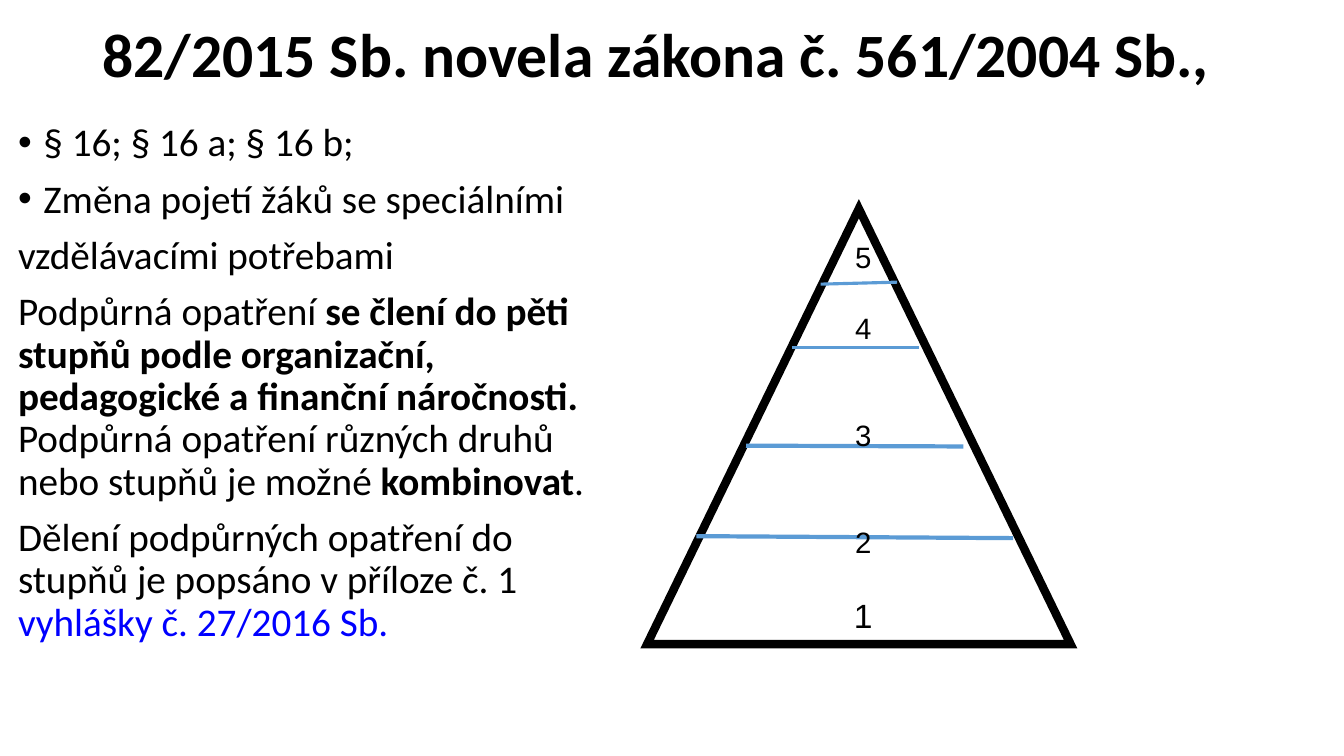
from lxml import etree
from pptx import Presentation
from pptx.dml.color import RGBColor
from pptx.enum.shapes import MSO_CONNECTOR, MSO_SHAPE
from pptx.enum.text import MSO_ANCHOR, MSO_AUTO_SIZE, PP_ALIGN
from pptx.oxml.ns import qn
from pptx.util import Cm, Pt

LEFT, CENTER = PP_ALIGN.LEFT, PP_ALIGN.CENTER
TOP, MIDDLE = MSO_ANCHOR.TOP, MSO_ANCHOR.MIDDLE
FIXED = MSO_AUTO_SIZE.NONE
STRAIGHT = MSO_CONNECTOR.STRAIGHT
TRIANGLE = MSO_SHAPE.ISOSCELES_TRIANGLE

COLORS = {"ink": "000000", "paper": "FFFFFF", "rung": "5B9BD5", "link": "0000FF"}

TITLE = "82/2015 Sb. novela zákona č. 561/2004 Sb.,"

# Each paragraph: bulleted or not, then its (text, style) runs.
BODY = [
    (True, [("§ 16; § 16 a; § 16 b;", "")]),
    (True, [("Změna pojetí žáků se speciálními", "")]),
    (False, [("vzdělávacími potřebami", "")]),
    (False, [
        ("Podpůrná opatření ", ""),
        ("se člení do pěti stupňů podle organizační, pedagogické "
         "a finanční náročnosti. ", "bold"),
        ("Podpůrná opatření různých druhů nebo stupňů je možné ", ""),
        ("kombinovat", "bold"),
        (".", ""),
    ]),
    (False, [
        ("Dělení podpůrných opatření do stupňů je popsáno v příloze č. 1 ", ""),
        ("vyhlášky č. 27/2016 Sb.", "link"),
    ]),
]

# Level, text size and space above, in points
LEVELS = [("5", 21, 0), ("4", 21, 26), ("3", 21, 51), ("2", 21, 51), ("1", 24, 26)]

# Start x, y, end x, y in cm, then width in points
RUNGS = [
    (17.55, 13.51, 25.53, 13.56, 3),
    (18.8, 11.23, 24.28, 11.25, 3),
    (19.96, 8.76, 23.16, 8.76, 2.25),
    (20.68, 7.16, 22.61, 7.11, 2.25),
]


def paint(name):
    return RGBColor.from_string(COLORS[name])


def write(para, text, size, font="Calibri", bold=False, color="ink"):
    run = para.add_run()
    run.text = text
    run.font.size = Pt(size)
    run.font.name = font
    run.font.bold = bold
    run.font.color.rgb = paint(color)


def place(shape, left, top, width, height, anchor=TOP):
    """Set a shape's box and return its text frame, ready for text."""
    shape.left, shape.top = Cm(left), Cm(top)
    shape.width, shape.height = Cm(width), Cm(height)
    frame = shape.text_frame
    frame.word_wrap = True
    frame.auto_size = FIXED
    frame.vertical_anchor = anchor
    return frame


def lines(frame, items):
    """Yield a paragraph with each item, using the first one already there."""
    for num, item in enumerate(items):
        yield (frame.add_paragraph() if num else frame.paragraphs[0]), item


def mark(para, on):
    """Turn the bullet and its hanging indent on or off."""
    props = para._p.get_or_add_pPr()
    hang = Cm(0.64) if on else 0
    props.set("marL", str(hang))
    props.set("indent", str(-hang))
    if on:
        etree.SubElement(props, qn("a:buFont")).set("typeface", "Arial")
        etree.SubElement(props, qn("a:buChar")).set("char", "•")
    else:
        etree.SubElement(props, qn("a:buNone"))


def add_text(slide):
    frame = place(slide.shapes.title, 2.33, 0.15, 29.21, 2.62, MIDDLE)
    para = frame.paragraphs[0]
    para.alignment = LEFT
    para.line_spacing = 0.9
    write(para, TITLE, 44, bold=True)

    frame = place(slide.placeholders[1], 0.2, 2.97, 15.21, 16.08)
    for para, (dot, runs) in lines(frame, BODY):
        para.alignment = LEFT
        para.line_spacing = 0.9
        para.space_before = Pt(10)
        mark(para, dot)
        for text, style in runs:
            write(para, text, 28, bold=style == "bold",
                  color="link" if style == "link" else "ink")


def add_pyramid(slide):
    shapes = slide.shapes
    body = shapes.add_shape(TRIANGLE, Cm(16.31), Cm(5.26), Cm(10.67), Cm(10.97))
    body.shadow.inherit = False
    body.fill.solid()
    body.fill.fore_color.rgb = paint("paper")
    body.line.color.rgb = paint("ink")
    body.line.width = Pt(6)
    edge = body.line._get_or_add_ln()
    etree.SubElement(edge, qn("a:miter")).set("lim", "800000")

    for *ends, width in RUNGS:
        rung = shapes.add_connector(STRAIGHT, *map(Cm, ends))
        rung.line.color.rgb = paint("rung")
        rung.line.width = Pt(width)
        etree.SubElement(rung._element.spPr, qn("a:effectLst"))

    box = shapes.add_textbox(0, 0, 0, 0)
    frame = place(box, 19.9, 5.89, 3.71, 10.13)
    for para, (level, size, gap) in lines(frame, LEVELS):
        para.alignment = CENTER
        para.space_before = Pt(gap)
        write(para, level, size, font="Arial")


def main():
    deck = Presentation()
    deck.slide_width, deck.slide_height = Cm(33.87), Cm(19.05)
    slide = deck.slides.add_slide(deck.slide_layouts[1])
    add_text(slide)
    add_pyramid(slide)
    deck.save("out.pptx")


if __name__ == "__main__":
    main()
